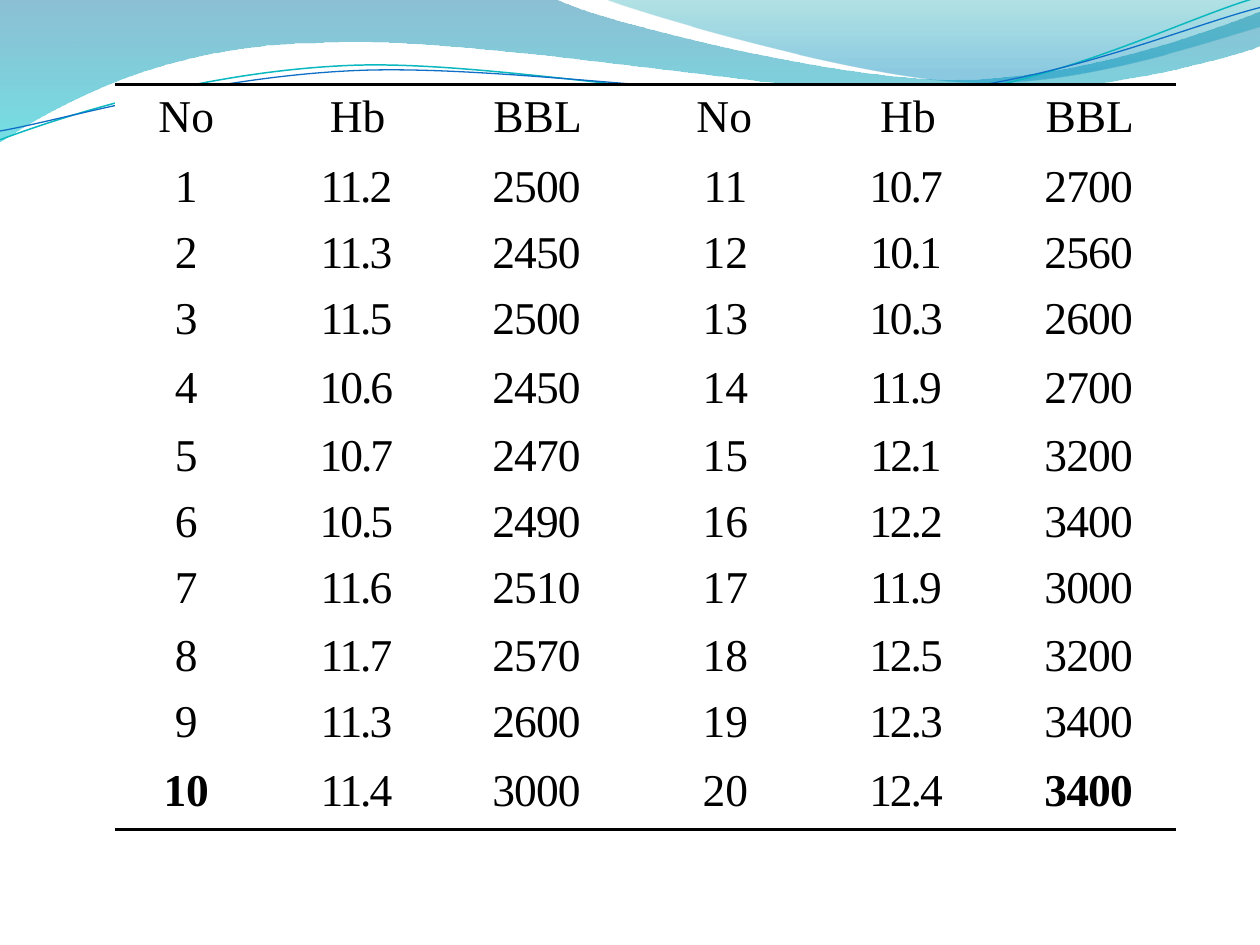
from lxml import etree
from pptx import Presentation
from pptx.dml.color import RGBColor
from pptx.enum.text import PP_ALIGN
from pptx.oxml.ns import qn
from pptx.util import Cm, Pt

BLACK = RGBColor(0x00, 0x00, 0x00)
WHITE = RGBColor(0xFF, 0xFF, 0xFF)
BLUE = RGBColor(0x00, 0x74, 0xA1)
AQUA = RGBColor(0x00, 0xC6, 0xCF)
TEAL = RGBColor(0x00, 0xA1, 0xA9)
SKY = RGBColor(0x00, 0x8B, 0xBF)
LINE_TEAL = RGBColor(0x0A, 0xB8, 0xBF)
LINE_BLUE = RGBColor(0x0F, 0x6F, 0xC6)
CM_PER_INCH = 2.54
PLAIN_TABLE_STYLE = "{2D5ABB26-0587-4C30-8999-92F81FD0307C}"

# Wave outlines in inches: a pair is a straight step, six numbers a Bezier curve
LEFT_WAVE = [
    (0, -0.01), (4.4, -0.01),
    (4.76, 0.17, 6.64, 0.63, 7.58, 0.63), (8.53, 0.63, 9.58, 0.26, 10, 0.09),
    (10.01, 0.36),
    (9.83, 0.44, 8.7, 0.76, 7.46, 0.75), (6.22, 0.75, 3.82, 0.28, 2.57, 0.34),
    (1.29, 0.35, 0.46, 0.83, -0.01, 1.13),
]
RIGHT_WAVE = [
    (4.79, -0.01),
    (5.09, 0.11, 6.82, 0.62, 7.69, 0.65), (8.56, 0.69, 9.61, 0.32, 10, 0.21),
    (10, 0),
]
TEAL_STROKE = [
    (0, 1.11),
    (0.48, 0.93, 1.58, 0.57, 2.77, 0.52), (3.95, 0.47, 5.93, 0.89, 7.13, 0.8),
    (8.33, 0.71, 9.38, 0.15, 9.98, -0.02),
]
BLUE_STROKE = [
    (0, 1.04),
    (0.47, 0.96, 1.64, 0.61, 2.83, 0.56), (4.03, 0.51, 5.97, 0.83, 7.17, 0.75),
    (8.36, 0.67, 9.41, 0.21, 10, 0.06),
]


def add_wave(outline, close):
    """Build a freeform through all points, turn its curve steps into Bezier
    segments and move it to the layout as background decoration."""
    points = [(Cm(step[i] * CM_PER_INCH), Cm(step[i + 1] * CM_PER_INCH))
              for step in outline for i in range(0, len(step), 2)]
    builder = slide.shapes.build_freeform(*points[0])
    builder.add_line_segments(points[1:], close=close)
    shape = builder.convert_to_shape()
    shape.shadow.inherit = False
    segments = list(shape._element.iter(qn("a:lnTo")))
    for step in outline[1:]:
        first = segments.pop(0)
        if len(step) == 6:
            first.tag = qn("a:cubicBezTo")
            for _ in range(2):
                extra = segments.pop(0)
                first.append(extra[0])
                extra.getparent().remove(extra)
    layout_tree = layout.shapes._spTree
    shape._element.nvSpPr.cNvPr.set("id", str(100 + len(layout_tree)))
    layout_tree.append(shape._element)
    return shape


def add_border(cell, side):
    line = etree.Element(qn(f"a:{side}"), w=str(Pt(2)))
    fill = etree.SubElement(line, qn("a:solidFill"))
    etree.SubElement(fill, qn("a:srgbClr"), val=str(BLACK))
    cell._tc.get_or_add_tcPr().insert(0, line)


presentation = Presentation()
presentation.slide_width = Cm(25.4)
presentation.slide_height = Cm(19.05)
layout = presentation.slide_layouts[6]
slide = presentation.slides.add_slide(layout)

# Filled waves: each stop is position, colour, opacity in percent
for outline, stops in [
    (LEFT_WAVE, [(0, BLUE, 45), (1, AQUA, 55)]),
    (RIGHT_WAVE, [(0, TEAL, 30), (0.8, SKY, 45)]),
]:
    shape = add_wave(outline, close=True)
    shape.line.fill.background()
    shape.fill.gradient()
    shape.fill.gradient_angle = 270
    for stop, (position, color, opacity) in zip(shape.fill.gradient_stops, stops):
        stop.position = position
        stop.color.rgb = color
    colors = list(shape._element.spPr.iter(qn("a:srgbClr")))
    for element, (position, color, opacity) in zip(colors, stops):
        etree.SubElement(element, qn("a:alpha"), val=str(opacity * 1000))

for outline, color, width in [(TEAL_STROKE, LINE_TEAL, 0.85), (BLUE_STROKE, LINE_BLUE, 0.75)]:
    shape = add_wave(outline, close=False)
    shape.fill.background()
    shape.line.color.rgb = color
    shape.line.width = Pt(width)

# Measurements table: ten cases on the left, ten on the right
HEADER = ["No", "Hb", "BBL"] * 2
HB = ["11.2", "11.3", "11.5", "10.6", "10.7", "10.5", "11.6", "11.7", "11.3", "11.4",
      "10.7", "10.1", "10.3", "11.9", "12.1", "12.2", "11.9", "12.5", "12.3", "12.4"]
BBL = [2500, 2450, 2500, 2450, 2470, 2490, 2510, 2570, 2600, 3000,
       2700, 2560, 2600, 2700, 3200, 3400, 3000, 3200, 3400, 3400]
cases = [[str(i + 1), HB[i], str(BBL[i])] for i in range(20)]
rows = [HEADER] + [left + right for left, right in zip(cases[:10], cases[10:])]
COLUMN_WIDTHS = [2.87, 3.66, 3.68, 3.73, 3.68, 3.76]
ROW_HEIGHTS = [1.42, 1.33, 1.33, 1.38, 1.38, 1.33, 1.33, 1.38, 1.33, 1.38, 1.43]
HEADER_INDENTS = [0, 0.38, 0.3, 0.41, 0.41, 0.3]
BODY_INDENTS = [0, 0.33, 0.25, 0.46, 0.33, 0.25]
BODY_SPACING = [0, -120, -50, 0, -120, -50]
TIGHTER_SPACING = {"10.1": -150, "12.1": -160}
BOLD_CELLS = {(10, 0), (10, 5)}

table = slide.shapes.add_table(
    len(rows), len(HEADER), Cm(2.32), Cm(1.7),
    Cm(sum(COLUMN_WIDTHS)), Cm(sum(ROW_HEIGHTS))).table
table.first_row = False
table.horz_banding = False
table._tbl.tblPr.find(qn("a:tableStyleId")).text = PLAIN_TABLE_STYLE
for column, width in zip(table.columns, COLUMN_WIDTHS):
    column.width = Cm(width)

for r, texts in enumerate(rows):
    table.rows[r].height = Cm(ROW_HEIGHTS[r])
    for c, text in enumerate(texts):
        cell = table.cell(r, c)
        cell.margin_left = cell.margin_right = Cm(0.08)
        cell.margin_top = cell.margin_bottom = 0
        cell.fill.solid()
        cell.fill.fore_color.rgb = WHITE
        cell.text = text
        paragraph = cell.text_frame.paragraphs[0]
        paragraph.alignment = PP_ALIGN.CENTER
        paragraph.line_spacing = 1.15
        indent = (HEADER_INDENTS if r == 0 else BODY_INDENTS)[c]
        paragraph._p.get_or_add_pPr().set("marL", str(Cm(indent)))
        paragraph.font.name = "Times New Roman"
        paragraph.font.size = Pt(26)
        paragraph.font.color.rgb = BLACK
        paragraph.font.bold = (r, c) in BOLD_CELLS
        if r > 0:
            spacing = TIGHTER_SPACING.get(text, BODY_SPACING[c])
            paragraph.runs[0]._r.get_or_add_rPr().set("spc", str(spacing))
        if r == 0:
            add_border(cell, "lnT")
        elif r == len(rows) - 1:
            add_border(cell, "lnB")

presentation.save("out.pptx")
